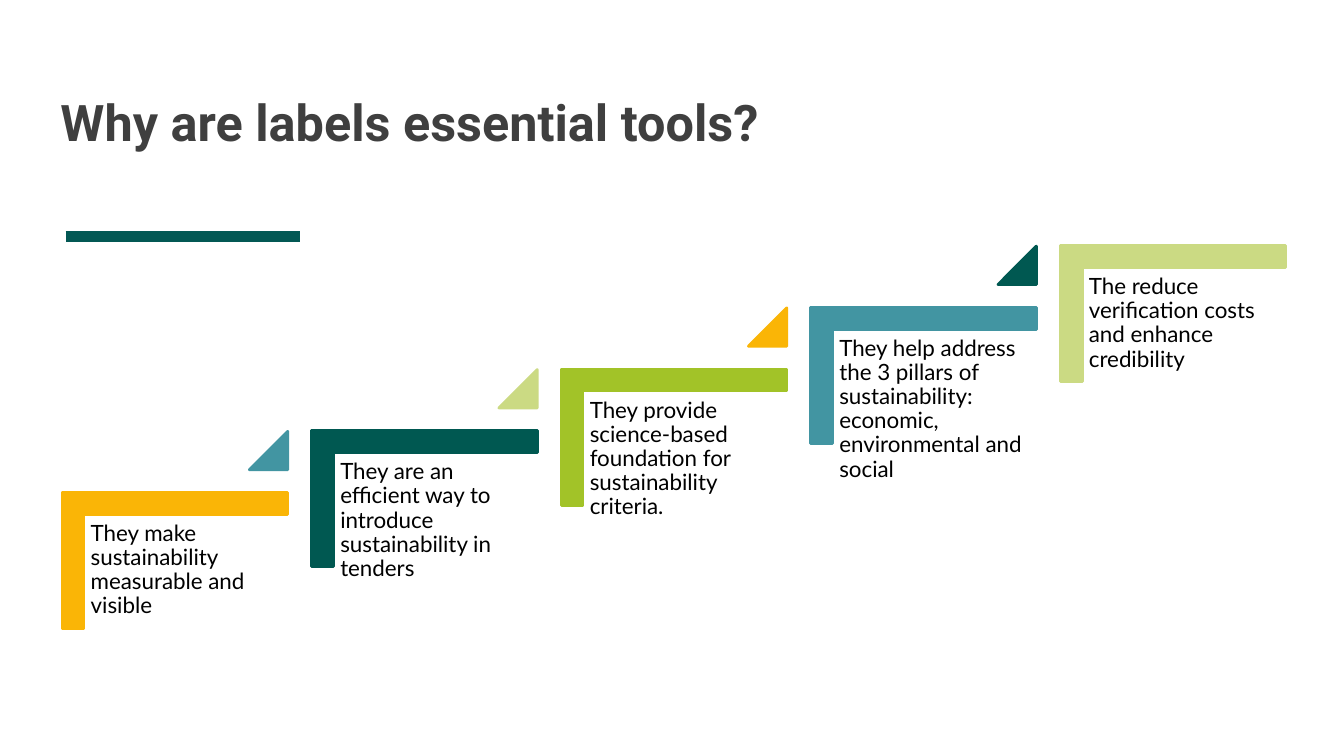
import pptx
import pptx.dml.color
import pptx.enum.shapes
import pptx.enum.text
import pptx.oxml
import pptx.oxml.ns
import pptx.util
from dataclasses import dataclass

Pt = pptx.util.Pt
SHAPES = pptx.enum.shapes.MSO_SHAPE
CORNER = SHAPES.from_xml("corner")
TEXT = pptx.enum.text


@dataclass(frozen=True)
class Theme:
    ink: str = "3F3F3F"
    black: str = "000000"
    rule: str = "035854"
    amber: str = "FAB506"
    green: str = "005851"
    lime: str = "A2C328"
    teal: str = "4295A2"
    pale: str = "CBDA83"
    title_font: str = "Roboto"
    body_font: str = "Lato"
    title_size: int = 36
    body_size: int = 16


THEME = Theme()

# Each step: text, bracket colour, colour of the triangle leading upwards
STEPS = [
    ("They make sustainability measurable and visible", THEME.amber, THEME.teal),
    ("They are an efficient way to introduce sustainability in tenders",
     THEME.green, THEME.pale),
    ("They provide science-based foundation for sustainability criteria.",
     THEME.lime, THEME.amber),
    ("They help address the 3 pillars of sustainability: economic, "
     "environmental and social", THEME.teal, THEME.green),
    ("The reduce verification costs and enhance credibility", THEME.pale, None),
]


def rgb(code):
    return pptx.dml.color.RGBColor.from_string(code)


def apply_format(target, values):
    for name, value in values.items():
        setattr(target, name, value)


def write_text(frame, text, inset, spacing, anchor, color, font):
    apply_format(frame, {
        "word_wrap": True, "auto_size": TEXT.MSO_AUTO_SIZE.NONE,
        "vertical_anchor": anchor,
        "margin_left": Pt(inset), "margin_right": Pt(inset),
        "margin_top": Pt(inset), "margin_bottom": Pt(inset),
    })
    para = frame.paragraphs[0]
    apply_format(para, {"alignment": TEXT.PP_ALIGN.LEFT,
                        "line_spacing": spacing, "space_before": Pt(0)})
    span = para.add_run()
    span.text = text
    apply_format(span.font, font)
    span.font.color.rgb = rgb(color)


def add_solid(page, kind, left, top, width, height, color):
    shape = page.shapes.add_shape(kind, Pt(left), Pt(top), Pt(width), Pt(height))
    shape.shadow.inherit = False
    shape.fill.solid()
    shape.fill.fore_color.rgb = rgb(color)
    shape.line.color.rgb = rgb(color)
    shape.line.width = Pt(2)
    return shape


def add_heading(page, left, top, width, height):
    # Title
    title = page.shapes.title
    apply_format(title, {"left": Pt(left), "top": Pt(top),
                         "width": Pt(width), "height": Pt(height)})
    write_text(title.text_frame, "Why are labels essential tools?", 0, 0.8,
               TEXT.MSO_ANCHOR.MIDDLE, THEME.ink,
               {"name": THEME.title_font, "size": Pt(THEME.title_size),
                "bold": True})
    # Accent rule below the title
    rule_left, rule_top = left + 3.6, top + height + 42.5
    rule = page.shapes.add_connector(
        pptx.enum.shapes.MSO_CONNECTOR.STRAIGHT,
        Pt(rule_left), Pt(rule_top), Pt(rule_left + 167.8), Pt(rule_top))
    rule.line.color.rgb = rgb(THEME.rule)
    rule.line.width = Pt(8)
    properties = rule._element.spPr
    properties.append(properties.makeelement(pptx.oxml.ns.qn("a:effectLst"), {}))


def add_step(page, left, top, width, height, text, color, next_color):
    # Bracket: an L turned a quarter, placed by its unrotated box
    bracket = add_solid(page, CORNER, left + (width - height) / 2,
                        top + (height - width) / 2, height, width, color)
    bracket.rotation = 90
    for index in range(2):
        bracket.adjustments[index] = 0.161
    # Text inside the bracket
    box = page.shapes.add_textbox(Pt(left + 15.5), Pt(top + 16.2),
                                  Pt(width - 15.8), Pt(127.4))
    write_text(box.text_frame, text, 5, 0.9, TEXT.MSO_ANCHOR.TOP, THEME.black,
               {"name": THEME.body_font, "size": Pt(THEME.body_size)})
    # Triangle towards the next step
    if next_color:
        side = 27.4
        triangle = add_solid(page, SHAPES.ISOSCELES_TRIANGLE,
                             left + width - side, top - 43.7, side, side,
                             next_color)
        triangle.adjustments[0] = 1


def add_staircase(page, left, top, width, height):
    step_width, step_height = 161.2, 97.2
    run = (width - step_width) / (len(STEPS) - 1)
    rise = (height - step_height) / (len(STEPS) - 1)
    for index, step in enumerate(STEPS):
        add_step(page, left + index * run,
                 top + height - step_height - index * rise,
                 step_width, step_height, *step)


def main():
    deck = pptx.Presentation()
    deck.slide_width, deck.slide_height = Pt(960), Pt(540)
    page = deck.slides.add_slide(deck.slide_layouts[5])
    add_heading(page, 43.2, 54.7, 866.2, 72)
    add_staircase(page, 44.3, 175.4, 874.2, 273.6)
    deck.save("out.pptx")


if __name__ == "__main__":
    main()
